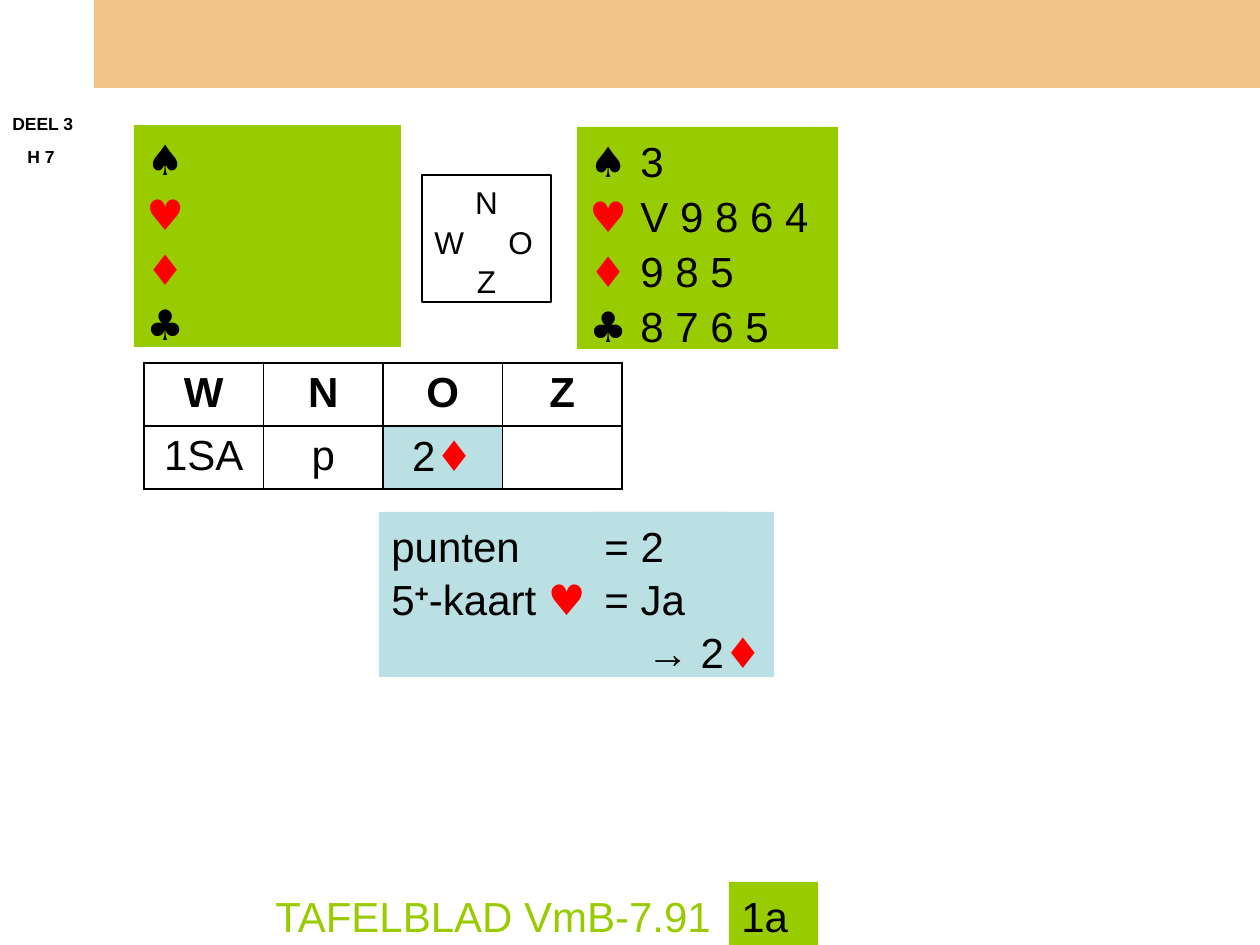
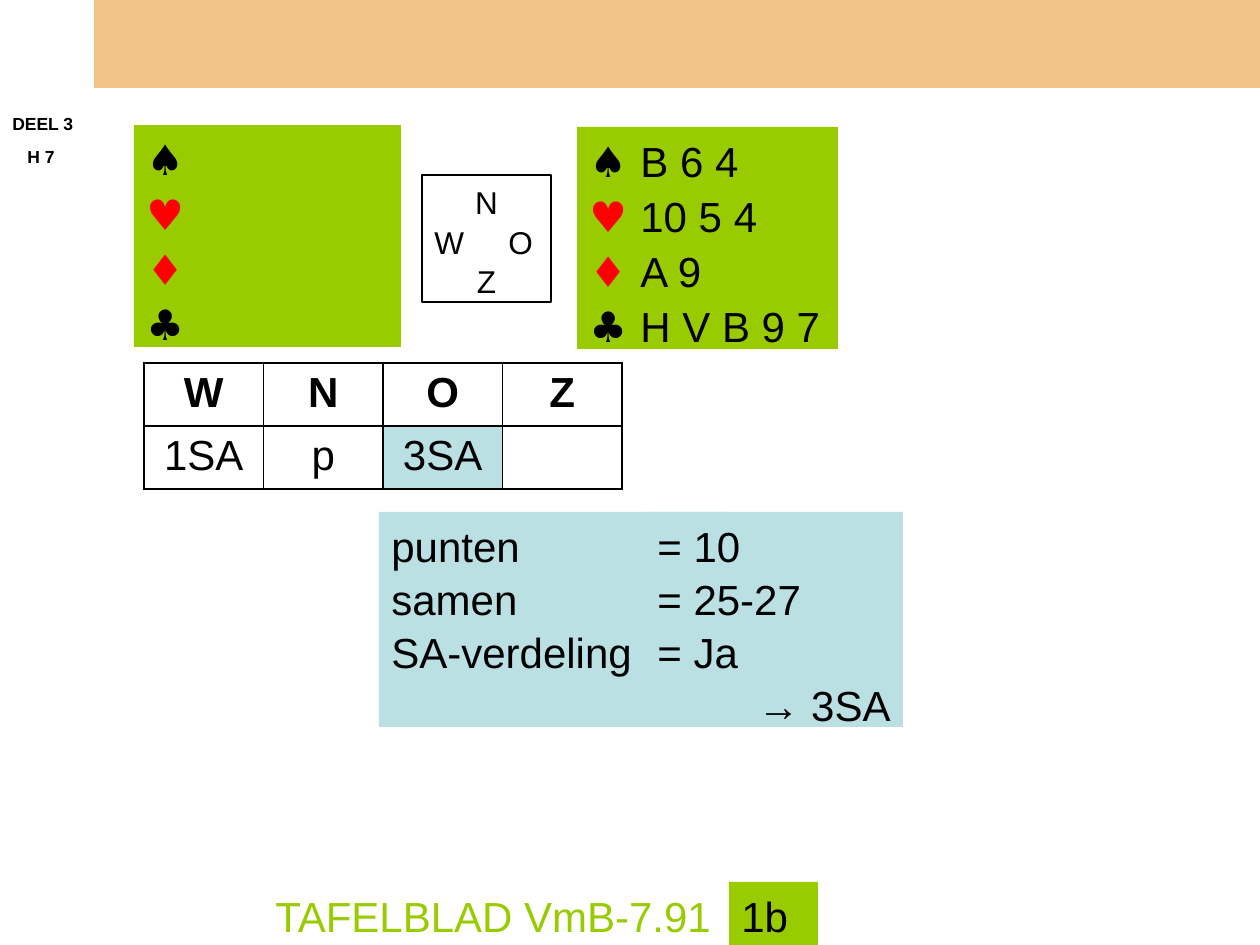
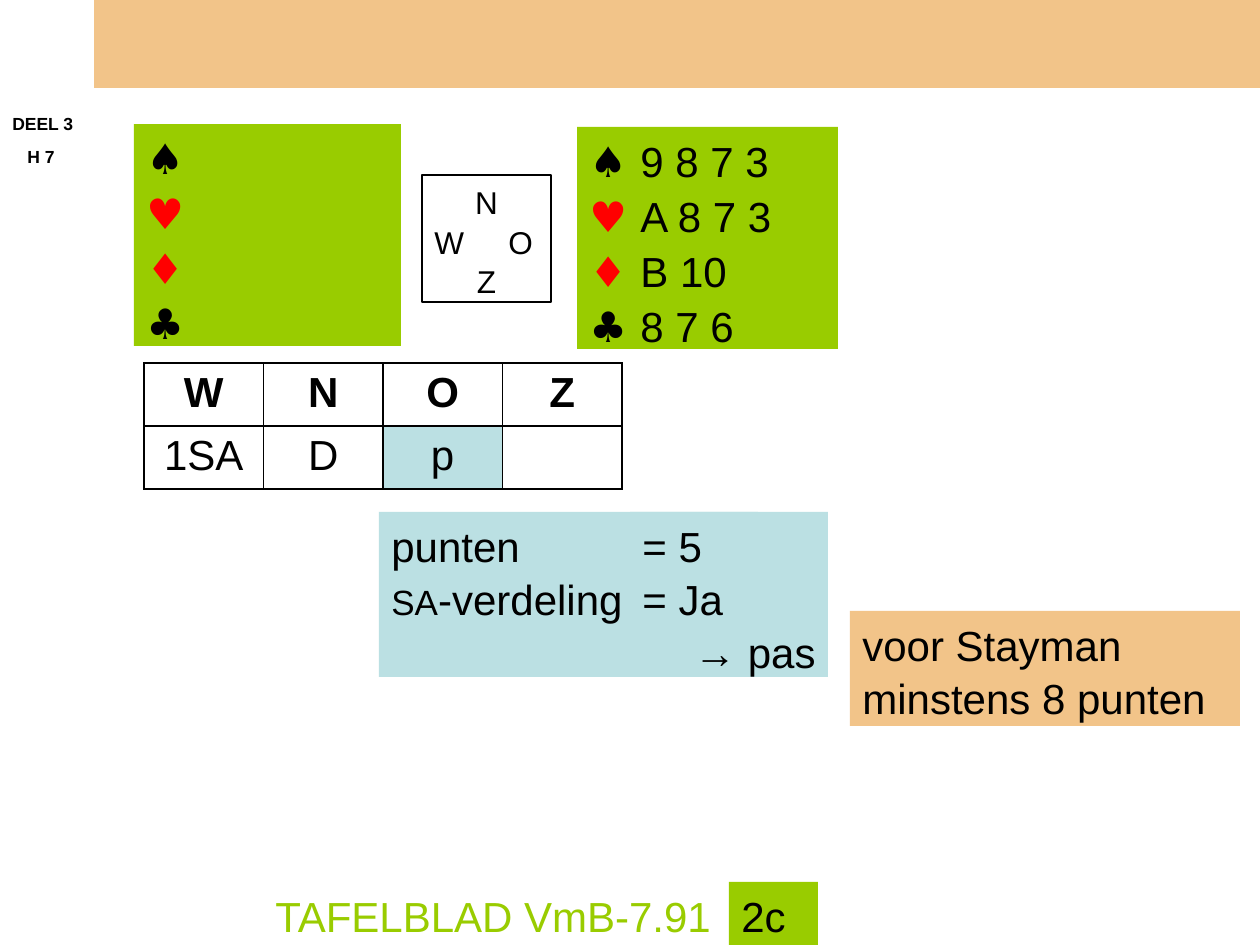
from dataclasses import dataclass

import pptx
import pptx.dml.color
import pptx.enum.shapes
import pptx.enum.text
import pptx.oxml
import pptx.oxml.ns
import pptx.util

EMU_PER_PX = 914400 / 126
COLORS = {
    "band": "F2C489",
    "green": "99CC00",
    "blue": "BBE0E3",
    "black": "000000",
    "red": "FF0000",
}
ALIGN = pptx.enum.text.PP_ALIGN
RECTANGLE = pptx.enum.shapes.MSO_SHAPE.RECTANGLE
SUITS = {"♠": "black", "♥": "red", "♦": "red", "♣": "black"}
LINE_SPACING = 1.05


@dataclass
class Span:
    text: str
    size: int = 24
    color: str = "black"
    font: str = "Arial"
    bold: bool = False
    raised: bool = False


@dataclass
class Line:
    spans: list
    align: ALIGN = ALIGN.LEFT
    before: float = 0
    indent: int = 0
    tab: int = 0


def px(length):
    return pptx.util.Emu(round(length * EMU_PER_PX))


def rgb(name):
    return pptx.dml.color.RGBColor.from_string(COLORS[name])


# Text
def line(text, align=ALIGN.LEFT, before=0, indent=0, tab=0, **style):
    return Line([Span(text, **style)], align, before, indent, tab)


def suit(symbol, gap=""):
    return Span(symbol + gap, color=SUITS[symbol], font="DejaVu Sans")


def style_font(font, span):
    font.name = span.font
    font.size = pptx.util.Pt(span.size)
    font.bold = span.bold
    font.color.rgb = rgb(span.color)


def write_line(para, content, spacing=LINE_SPACING):
    properties = para._p.get_or_add_pPr()
    if content.indent:
        properties.set("marL", str(px(content.indent)))
    if content.tab:
        tabs = pptx.oxml.parse_xml(
            f'<a:tabLst {pptx.oxml.ns.nsdecls("a")}>'
            f'<a:tab pos="{px(content.tab)}" algn="l"/></a:tabLst>')
        properties.append(tabs)
    para.alignment = content.align
    para.line_spacing = spacing
    para.space_before = pptx.util.Pt(content.before)
    for part in content.spans:
        span = para.add_run()
        span.text = part.text
        if len(content.spans) > 1:
            style_font(span.font, part)
        if part.raised:
            span._r.get_or_add_rPr().set("baseline", "30000")
    if len(content.spans) == 1:
        style_font(para.font, content.spans[0])


def write_lines(box, lines):
    frame = box.text_frame
    frame.word_wrap = True
    frame.vertical_anchor = pptx.enum.text.MSO_ANCHOR.TOP
    for index, content in enumerate(lines):
        para = frame.add_paragraph() if index else frame.paragraphs[0]
        write_line(para, content)


# Boxes
def add_label(page, place, lines):
    write_lines(page.shapes.add_textbox(*map(px, place)), lines)


def add_panel(page, place, fill=None, lines=(), outline=None):
    box = page.shapes.add_shape(RECTANGLE, *map(px, place))
    box.shadow.inherit = False
    if fill:
        box.fill.solid()
        box.fill.fore_color.rgb = rgb(fill)
    else:
        box.fill.background()
    if outline:
        box.line.color.rgb = rgb(outline)
        box.line.width = pptx.util.Pt(0.75)
    else:
        box.line.fill.background()
    write_lines(box, lines)


# Bridge elements
def add_frame(page, number):
    add_panel(page, (94, 0, 1166, 88), "band")
    add_label(page, (0, 106, 94, 66), [
        line("DEEL 3", size=10, bold=True),
        line("H 7", before=6.2, indent=15, size=10, bold=True),
    ])
    add_label(page, (263, 882, 893, 63),
              [line("TAFELBLAD VmB-7.91", color="green")])
    add_panel(page, (729, 882, 89, 63), "green", [line(number)])


def add_hand(page, place, holdings=None):
    lines = []
    for index, symbol in enumerate(SUITS):
        spans = [suit(symbol)]
        if holdings:
            spans = [suit(symbol, " "), Span(holdings[index])]
        lines.append(Line(spans, before=1.2 if index else 0))
    add_panel(page, place, "green", lines)


def add_compass(page):
    add_panel(page, (422, 175, 129, 127), outline="black", lines=[
        line("N", ALIGN.CENTER, size=18),
        line("W\tO", tab=74, size=18),
        line("Z", ALIGN.CENTER, size=18),
    ])


def add_borders(cell):
    properties = cell._tc.get_or_add_tcPr()
    for index, side in enumerate(("lnL", "lnR", "lnT", "lnB")):
        border = pptx.oxml.parse_xml(
            f'<a:{side} {pptx.oxml.ns.nsdecls("a")} w="12700"><a:solidFill>'
            f'<a:srgbClr val="{COLORS["black"]}"/></a:solidFill></a:{side}>')
        properties.insert(index, border)


def add_bidding(page, bids):
    seats = [[Span(seat, bold=True)] for seat in "WNOZ"]
    rows = [seats, bids + [[]]]
    table = page.shapes.add_table(
        2, 4, px(144), px(363), px(478), px(126)).table
    table.first_row = table.horz_banding = False
    for column in table.columns:
        column.width = px(478 / 4)
    for row_index, row in enumerate(rows):
        table.rows[row_index].height = px(63)
        for column_index, spans in enumerate(row):
            cell = table.cell(row_index, column_index)
            if (row_index, column_index) == (1, 2):
                cell.fill.solid()
                cell.fill.fore_color.rgb = rgb("blue")
            else:
                cell.fill.background()
            add_borders(cell)
            write_line(cell.text_frame.paragraphs[0],
                       Line(spans, ALIGN.CENTER), 1.0)


def add_reasoning(page, questions, question_width, answers, answer_place):
    left, width = answer_place
    height = 15 + 50 * len(answers)
    add_panel(page, (379, 512, question_width, height), "blue", questions)
    add_panel(page, (left, 512, width, height), "blue", answers)


# One dictionary per page
PAGES = [
    {
        "number": "1a",
        "west_top": 125,
        "east": ["3", "V 9 8 6 4", "9 8 5", "8 7 6 5"],
        "bids": [[Span("1SA")], [Span("p")], [Span("2"), suit("♦")]],
        "questions": [
            line("punten"),
            Line([Span("5"), Span("+", bold=True, raised=True),
                  Span("-kaart "), suit("♥")]),
        ],
        "question_width": 350,
        "answers": [line("= 2"), line("= Ja"),
                    Line([Span("→ 2"), suit("♦")], ALIGN.RIGHT)],
        "answer_place": (592, 182),
    },
    {
        "number": "1b",
        "west_top": 125,
        "east": ["B 6 4", "10 5 4", "A 9", "H V B 9 7"],
        "bids": [[Span("1SA")], [Span("p")], [Span("3SA")]],
        "questions": [line("punten"), line("samen"), line("SA-verdeling")],
        "question_width": 350,
        "answers": [line("= 10"), line("= 25-27"), line("= Ja"),
                    line("→ 3SA", ALIGN.RIGHT)],
        "answer_place": (645, 258),
    },
    {
        "number": "2c",
        "west_top": 124,
        "east": ["9 8 7 3", "A 8 7 3", "B 10", "8 7 6"],
        "bids": [[Span("1SA")], [Span("D")], [Span("p")]],
        "questions": [line("punten"),
                      Line([Span("SA", size=20), Span("-verdeling")])],
        "question_width": 379,
        "answers": [line("= 5"), line("= Ja"), line("→ pas", ALIGN.RIGHT)],
        "answer_place": (630, 198),
        "remark": ["voor Stayman", "minstens 8 punten"],
    },
]


def main():
    deck = pptx.Presentation()
    deck.slide_width, deck.slide_height = px(1260), px(945)
    for content in PAGES:
        page = deck.slides.add_slide(deck.slide_layouts[6])
        add_frame(page, content["number"])
        add_bidding(page, content["bids"])
        add_reasoning(page, content["questions"], content["question_width"],
                      content["answers"], content["answer_place"])
        add_hand(page, (577, 127, 261, 222), content["east"])
        add_hand(page, (134, content["west_top"], 267, 222))
        add_compass(page)
        if "remark" in content:
            add_panel(page, (850, 611, 390, 115), "band",
                      [line(text) for text in content["remark"]])
    deck.save("out.pptx")


if __name__ == "__main__":
    main()
